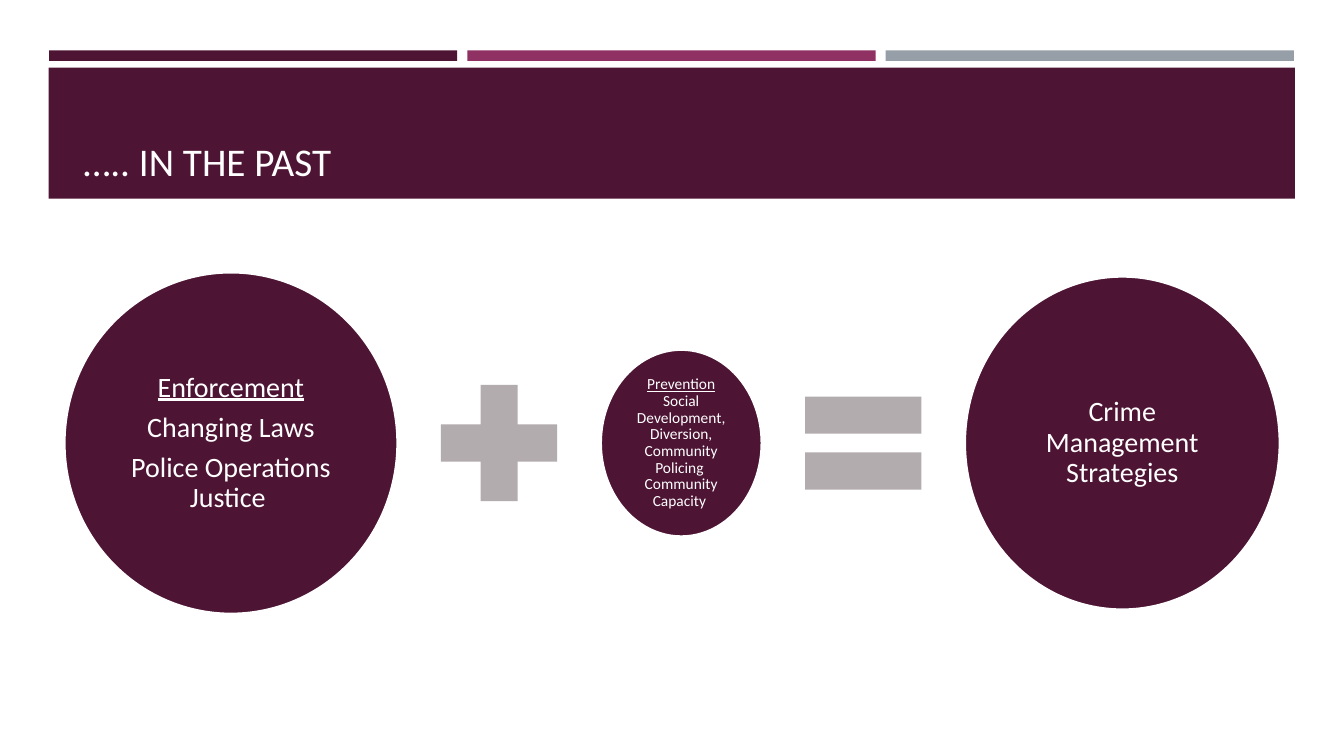
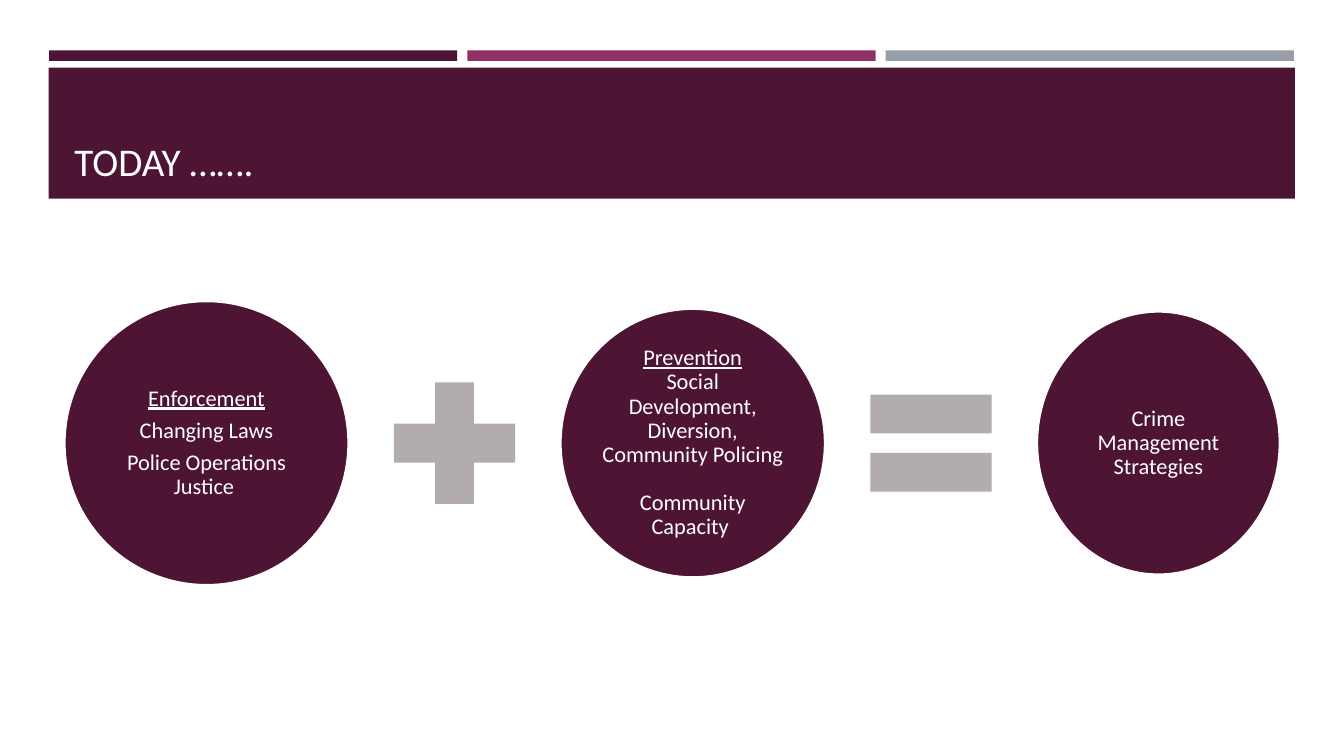
"""Build two slides that compare past and present crime management."""
from copy import deepcopy
from dataclasses import dataclass

from pptx import Presentation
from pptx.dml.color import RGBColor
from pptx.enum.shapes import MSO_SHAPE
from pptx.enum.text import MSO_ANCHOR, MSO_AUTO_SIZE, PP_ALIGN
from pptx.util import Pt


@dataclass(frozen=True)
class Theme:
    """Colours, font and type sizes of the deck."""
    plum: str = "4D1434"
    berry: str = "903163"
    slate: str = "969FA7"
    operator: str = "B2ACAE"
    white: str = "FFFFFF"
    font: str = "Calibri"
    title: int = 28
    large: int = 20
    medium: int = 16
    small: int = 11


THEME = Theme()
ROW_LEFT, ROW_RIGHT, ROW_MIDDLE = 46, 914.2, 316.5
ENFORCEMENT = ["Enforcement", "Changing Laws", "Police Operations\nJustice "]
PREVENTION = ["Prevention\nSocial Development, Diversion, Community Policing \nCommunity Capacity "]
STRATEGIES = ["Crime Management Strategies"]


def write(tf, paragraphs, size, align=PP_ALIGN.CENTER, anchor=MSO_ANCHOR.MIDDLE,
          heading=False, spacing=None, after=0):
    """Fill a text frame, underlining the first line when it is a heading."""
    tf.word_wrap = True
    tf.auto_size = MSO_AUTO_SIZE.NONE
    tf.vertical_anchor = anchor
    for i, text in enumerate(paragraphs):
        p = tf.add_paragraph() if i else tf.paragraphs[0]
        p.alignment = align
        p.line_spacing = spacing
        p.space_before, p.space_after = Pt(0), Pt(after)
        for j, line in enumerate(text.split("\n")):
            if j:
                p.add_line_break()
                p._p[-1].append(deepcopy(r._r.get_or_add_rPr()))
            r = p.add_run()
            r.text = line
            r.font.name, r.font.size = THEME.font, Pt(size)
            r.font.color.rgb = RGBColor.from_string(THEME.white)
            r.font.underline = heading and i == j == 0


class Deck:
    """Holds the presentation and the slide being drawn."""

    def __init__(self):
        """Start an empty widescreen presentation."""
        self.prs = Presentation()
        self.prs.slide_width, self.prs.slide_height = Pt(960), Pt(540)
        self.s = None

    def shape(self, kind, x, y, w, h, fill, line=None):
        """Add a flat preset shape."""
        sp = self.s.shapes.add_shape(kind, Pt(x), Pt(y), Pt(w), Pt(h))
        sp.shadow.inherit = False
        sp.fill.solid()
        sp.fill.fore_color.rgb = RGBColor.from_string(fill)
        if line:
            sp.line.color.rgb = RGBColor.from_string(line)
            sp.line.width = Pt(1.75)
        else:
            sp.line.fill.background()
        return sp

    def slide(self, title):
        """Open a slide with its bands and title."""
        self.s = self.prs.slides.add_slide(self.prs.slide_layouts[5])
        for i, colour in enumerate((THEME.plum, THEME.berry, THEME.slate)):
            self.shape(MSO_SHAPE.RECTANGLE, 35 + 298.8 * i, 36, 291.6, 7.5, colour)
        self.shape(MSO_SHAPE.RECTANGLE, 34.8, 48.4, 890.2, 93.6, THEME.plum)
        sp = self.s.shapes.title
        self.s.shapes._spTree.append(sp._element)
        sp.left, sp.top, sp.width, sp.height = Pt(46), Pt(55.4), Pt(868), Pt(80)
        write(sp.text_frame, [title], THEME.title, align=PP_ALIGN.LEFT, anchor=MSO_ANCHOR.BOTTOM)

    def circle(self, x, w, h, paragraphs, size):
        """Add a captioned ellipse on the row's middle line."""
        sp = self.shape(MSO_SHAPE.OVAL, x, ROW_MIDDLE - h / 2, w, h, THEME.plum, THEME.white)
        tf = sp.text_frame
        tf.margin_left = tf.margin_right = tf.margin_top = tf.margin_bottom = Pt(size * 0.1)
        write(tf, paragraphs, size, heading=paragraphs is not STRATEGIES,
              spacing=0.9, after=size * 0.35)

    def operator(self, kind, x, side):
        """Add a plus or equals sign on the row's middle line."""
        self.shape(kind, x, ROW_MIDDLE - side / 2, side, side, THEME.operator)

    def equation(self, circles, side):
        """Spread three circles and two operators with equal gaps."""
        gap = (ROW_RIGHT - ROW_LEFT - sum(c[0] for c in circles) - 2 * side) / 4
        signs = (MSO_SHAPE.MATH_PLUS, MSO_SHAPE.MATH_EQUAL, None)
        x = ROW_LEFT
        for (w, h, paragraphs, size), sign in zip(circles, signs):
            self.circle(x, w, h, paragraphs, size)
            x += w + gap
            if sign:
                self.operator(sign, x, side)
                x += side + gap


def main():
    """Build and save the deck."""
    deck = Deck()
    deck.slide(" ….. IN THE PAST")
    deck.equation([(238, 244, ENFORCEMENT, THEME.large),
                   (115, 133.5, PREVENTION, THEME.small),
                   (225, 238, STRATEGIES, THEME.large)], 113)
    deck.slide("TODAY …….")
    deck.equation([(203, 203, ENFORCEMENT, THEME.medium),
                   (189, 192, PREVENTION, THEME.medium),
                   (173.5, 188, STRATEGIES, THEME.medium)], 118)
    deck.prs.save("out.pptx")


if __name__ == "__main__":
    main()
